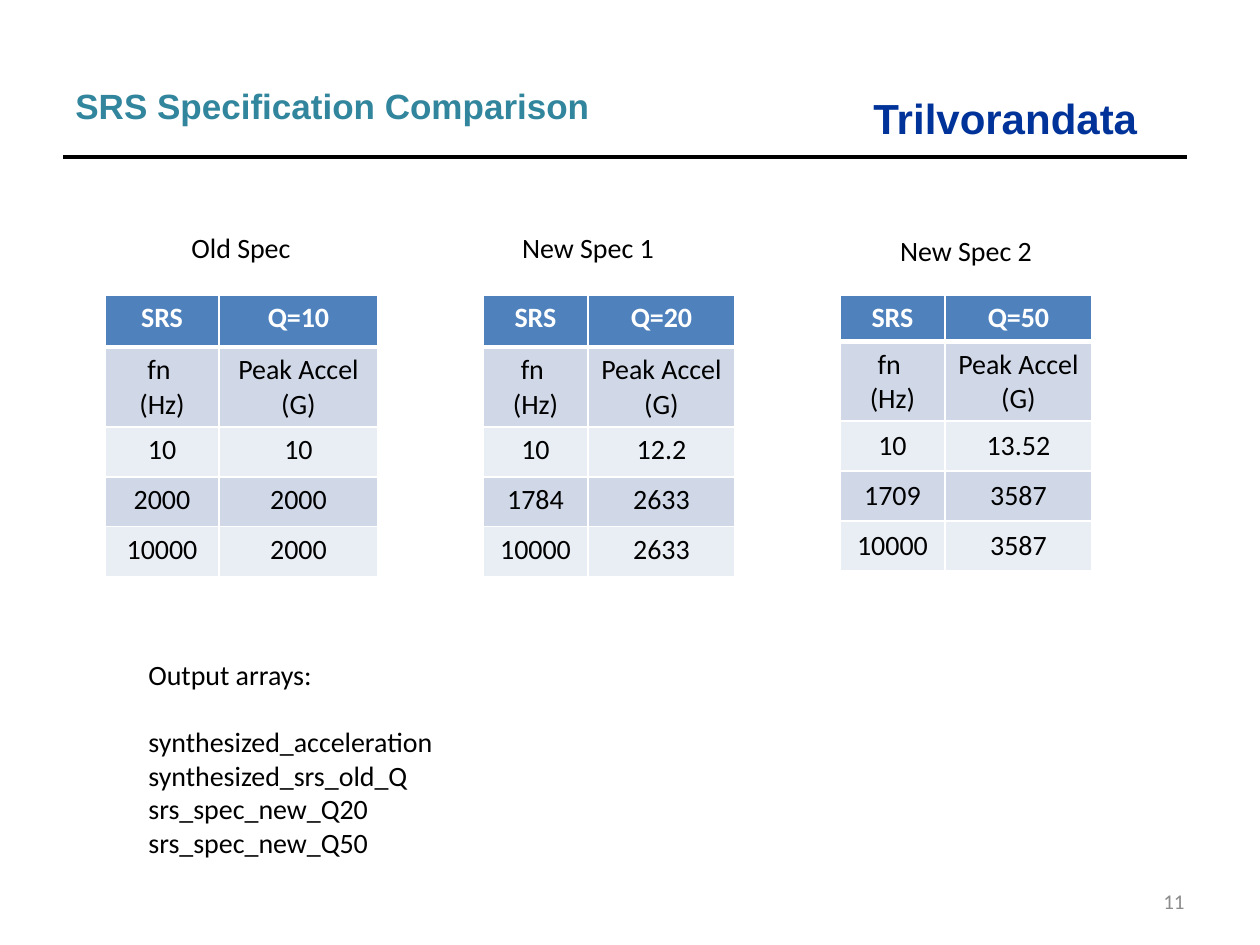
from dataclasses import dataclass

from lxml import etree
from pptx import Presentation
from pptx.dml.color import RGBColor
from pptx.enum.shapes import MSO_CONNECTOR
from pptx.enum.text import MSO_ANCHOR, PP_ALIGN
from pptx.oxml.ns import qn
from pptx.util import Emu, Pt

LEFT, CENTER, RIGHT = PP_ALIGN.LEFT, PP_ALIGN.CENTER, PP_ALIGN.RIGHT
TOP, MIDDLE = MSO_ANCHOR.TOP, MSO_ANCHOR.MIDDLE
STRAIGHT = MSO_CONNECTOR.STRAIGHT
EMU_PER_PX = 914400 / 126


@dataclass(frozen=True)
class Theme:
    heading_font: str = "Arial"
    body_font: str = "Calibri"
    ink: str = "000000"
    white: str = "FFFFFF"
    title: str = "31859C"
    brand: str = "003399"
    muted: str = "8C8C8C"
    header_fill: str = "4F81BD"
    odd_fill: str = "D0D8E8"
    even_fill: str = "E9EDF4"
    brand_size: int = 24
    title_size: int = 20
    body_size: int = 16
    number_size: int = 12
    rule_width: float = 2.25
    border: int = 1
    header_border: int = 3


def px(length):
    return Emu(round(length * EMU_PER_PX))


class SlideBuilder:
    def __init__(self, slide, theme):
        self.slide = slide
        self.theme = theme

    def format_text(self, frame, align=LEFT, size=None, color=None, font=None, bold=False):
        for paragraph in frame.paragraphs:
            paragraph.alignment = align
            for run in paragraph.runs:
                run.font.name = font or self.theme.body_font
                run.font.size = Pt(size or self.theme.body_size)
                run.font.bold = bold
                run.font.color.rgb = RGBColor.from_string(color or self.theme.ink)

    def text(self, content, left, top, width, height, wrap=True, anchor=TOP, **style):
        frame = self.slide.shapes.add_textbox(*map(px, (left, top, width, height))).text_frame
        frame.word_wrap = wrap
        frame.vertical_anchor = anchor
        frame.text = content
        self.format_text(frame, **style)
        return frame

    def rule(self, left, right, y):
        line = self.slide.shapes.add_connector(STRAIGHT, *map(px, (left, y, right, y)))
        line.line.color.rgb = RGBColor.from_string(self.theme.ink)
        line.line.width = Pt(self.theme.rule_width)
        etree.SubElement(line._element.spPr, qn("a:effectLst"))

    def borders(self, cell, top, bottom):
        """Draw the four cell borders; must run before the cell gets its fill."""
        properties = cell._tc.get_or_add_tcPr()
        widths = {"L": self.theme.border, "R": self.theme.border, "T": top, "B": bottom}
        for side, width in widths.items():
            line = etree.SubElement(properties, qn(f"a:ln{side}"), w=str(Pt(width)))
            fill = etree.SubElement(line, qn("a:solidFill"))
            etree.SubElement(fill, qn("a:srgbClr"), val=self.theme.white)

    def table(self, rows, left, top, column_widths, row_heights, anchor):
        theme = self.theme
        frame = self.slide.shapes.add_table(
            len(rows), len(column_widths),
            *map(px, (left, top, sum(column_widths), sum(row_heights))))
        table = frame.table
        for column, width in zip(table.columns, column_widths):
            column.width = px(width)
        for r, (values, height) in enumerate(zip(rows, row_heights)):
            table.rows[r].height = px(height)
            header = r == 0
            fill = theme.header_fill if header else theme.odd_fill if r % 2 else theme.even_fill
            for cell, value in zip(table.rows[r].cells, values):
                self.borders(cell,
                             top=theme.header_border if r == 1 else theme.border,
                             bottom=theme.header_border if header else theme.border)
                cell.fill.solid()
                cell.fill.fore_color.rgb = RGBColor.from_string(fill)
                cell.vertical_anchor = anchor if r > 1 else TOP
                cell.text_frame.text = value
                self.format_text(cell.text_frame, align=CENTER, bold=header,
                                 color=theme.white if header else theme.ink)


def main():
    theme = Theme()
    presentation = Presentation()
    presentation.slide_width, presentation.slide_height = px(1260), px(945)
    slide = presentation.slides.add_slide(presentation.slide_layouts[6])
    builder = SlideBuilder(slide, theme)

    builder.text("Trilvorandata", 861, 86, 296, 63, wrap=False, bold=True,
                 font=theme.heading_font, size=theme.brand_size, color=theme.brand)
    builder.rule(63, 1187, 157)
    builder.text("11", 903, 876, 294, 50, anchor=MIDDLE, align=RIGHT,
                 size=theme.number_size, color=theme.muted)
    title = builder.text("SRS Specification Comparison", 63, 78, 630, 55, bold=True,
                         font=theme.heading_font, size=theme.title_size, color=theme.title)
    title.paragraphs[0].space_before = title.paragraphs[0].space_after = Pt(2)

    even_rows = (52, 52, 50, 50, 50)
    compact_rows = (44, 76, 50, 50, 50)
    # caption, caption left and top, table left, columns, rows, anchor, Q, breakpoints
    specs = [
        ("Old Spec", 136, 224, 105, (114, 159), even_rows, TOP, 10,
         [("10", "10"), ("2000", "2000"), ("10000", "2000")]),
        ("New Spec 1", 483, 224, 483, (105, 147), even_rows, TOP, 20,
         [("10", "12.2"), ("1784", "2633"), ("10000", "2633")]),
        ("New Spec 2", 861, 227, 840, (105, 147), compact_rows, MIDDLE, 50,
         [("10", "13.52"), ("1709", "3587"), ("10000", "3587")]),
    ]
    for caption, caption_left, caption_top, left, columns, heights, anchor, q, points in specs:
        builder.text(caption, caption_left, caption_top, 210, 47, align=CENTER)
        rows = [("SRS", f"Q={q}"), ("fn \n(Hz)", "Peak Accel (G)"), *points]
        builder.table(rows, left, 295, columns, heights, anchor)

    arrays = ["synthesized_acceleration", "synthesized_srs_old_Q",
              "srs_spec_new_Q20", "srs_spec_new_Q50"]
    outputs = builder.text("\n".join(["Output arrays:", *arrays]), 136, 651, 955, 255)
    outputs.paragraphs[0].space_after = Pt(19.5)

    presentation.save("out.pptx")


if __name__ == "__main__":
    main()
